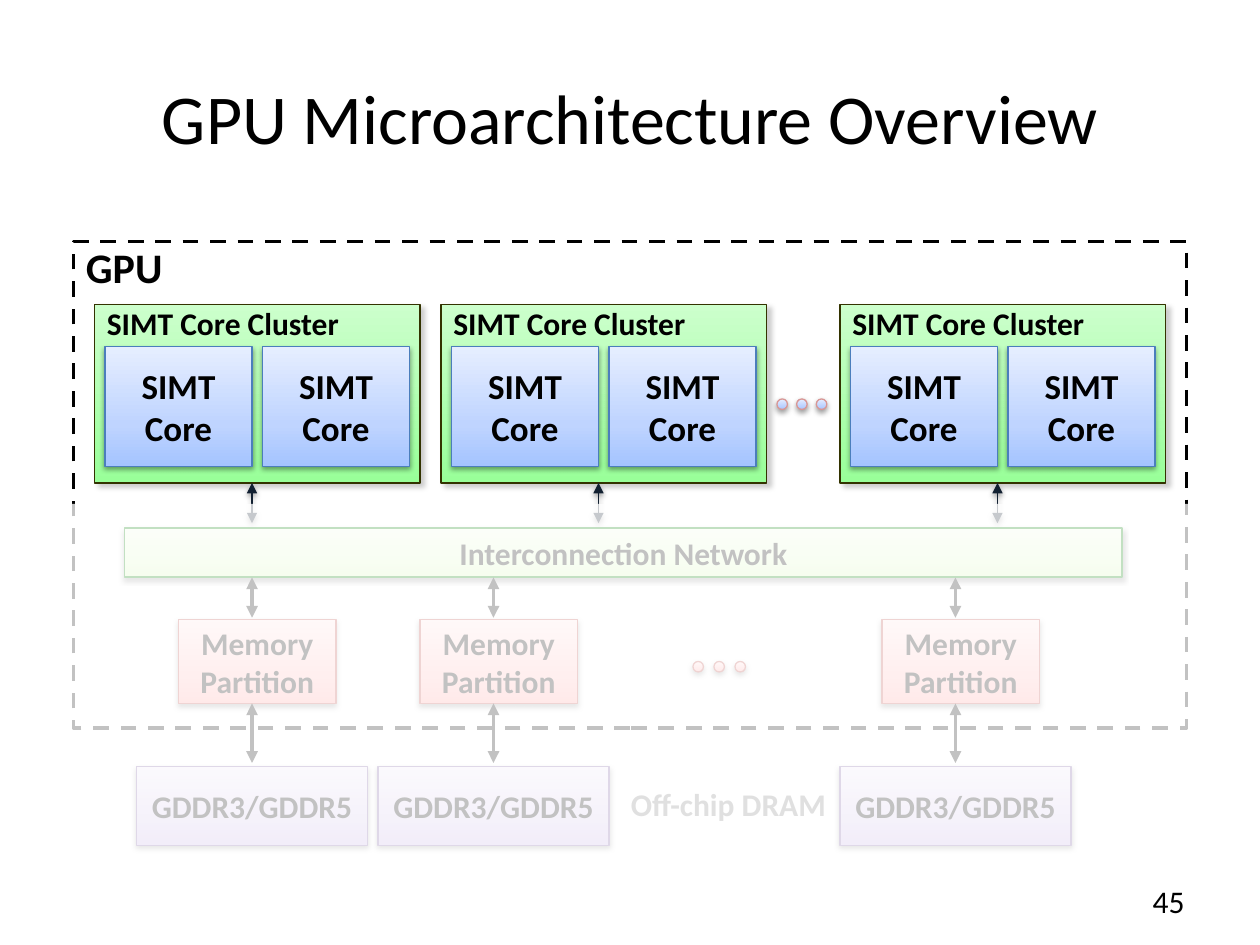
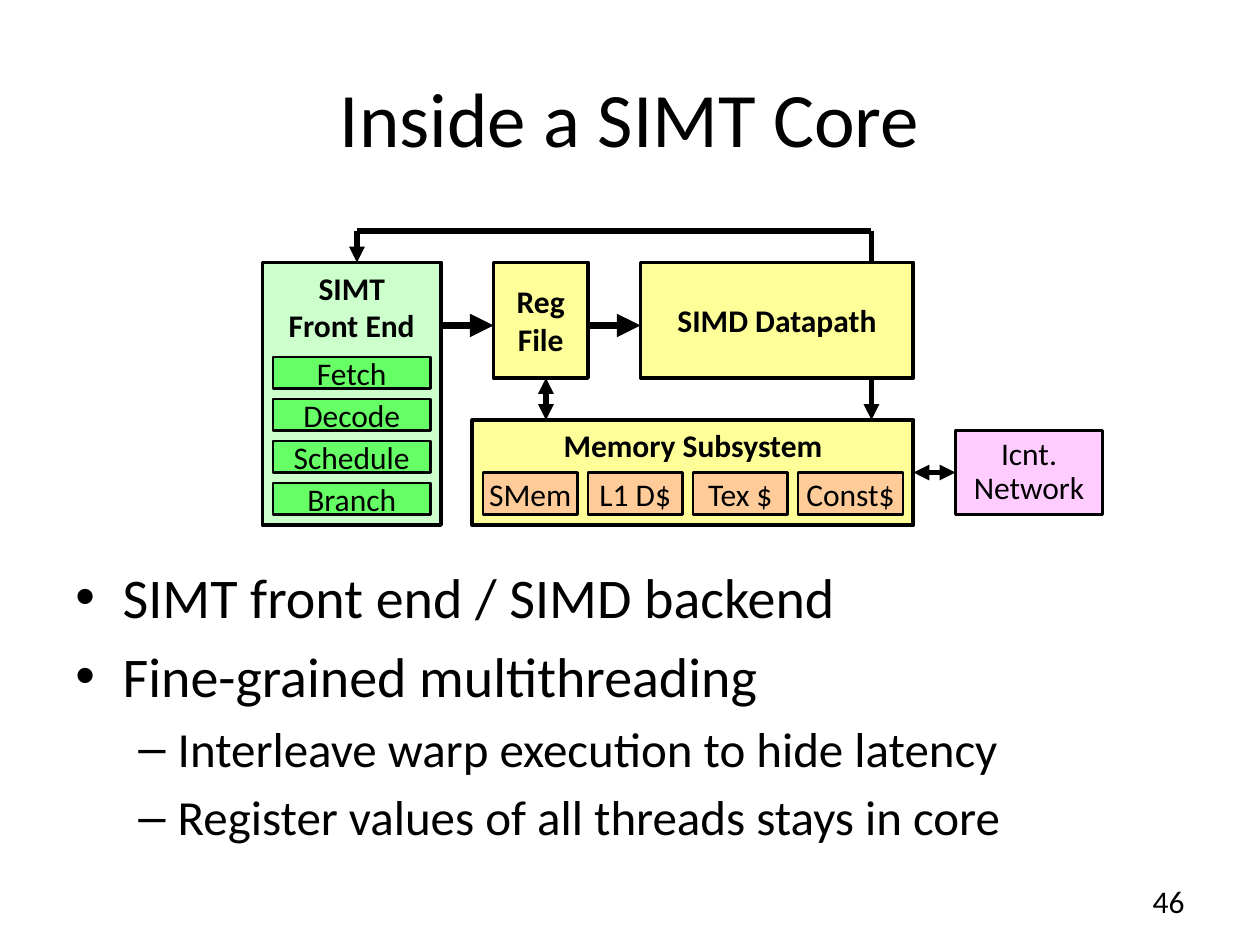
from lxml.etree import SubElement
from pptx import Presentation
from pptx.dml.color import RGBColor
from pptx.enum.dml import MSO_LINE
from pptx.enum.shapes import MSO_CONNECTOR, MSO_SHAPE
from pptx.enum.text import MSO_ANCHOR as Anchor, PP_ALIGN as Align
from pptx.oxml.ns import qn
from pptx.util import Pt

COLORS = {
    "black": "000000", "white": "FFFFFF", "gray": "7F7F7F",
    "cluster edge": "333300", "core edge": "4B7EBC", "core dot edge": "D99694",
    "core arrow": "122031", "network edge": "008000",
    "memory edge": "BF4C48", "dram edge": "7D60A0",
    "front end": "CCFFCC", "stage": "66FF66", "backend": "FFFF99",
    "cache": "FFCC99", "icnt": "FFCCFF",
}
# Gradient stops (percent, colour), from the bottom edge to the top
GRADIENTS = {
    "cluster": [(0, "99FF99"), (100, "CCFFCC")],
    "core": [(0, "A4C4FF"), (35, "BFD4FF"), (100, "E6EEFF")],
    "network": [(0, "DAFABB"), (50, "E7FBD4"), (100, "F3FDE9")],
    "memory": [(0, "FFA6A5"), (35, "FFC0BF"), (100, "FFE7E7")],
    "dram": [(0, "C9B5E8"), (35, "D8CBEE"), (100, "F0EAF9")],
}
# Shadows: opacity percent, blur, distance, direction in degrees
SOFT = (38, 3.1, 1.6, 90)
CORNER = (20, 3, 3, 45)
# Arrowheads
BOTH = ("headEnd", "tailEnd")
TO_END = ("tailEnd",)


def rgb(name):
    return RGBColor.from_string(COLORS[name])


def add_color(parent, hex_color, opacity=100):
    color = SubElement(parent, qn("a:srgbClr"), val=hex_color)
    if opacity < 100:
        SubElement(color, qn("a:alpha"), val=str(opacity * 1000))


class Deck:
    font = "Calibri"

    def __init__(self):
        self.prs = Presentation()
        self.prs.slide_width, self.prs.slide_height = Pt(720), Pt(540)
        self.slide = None

    def new_slide(self, title, title_size):
        self.slide = self.prs.slides.add_slide(self.prs.slide_layouts[6])
        self.label(36, 21.6, 648, 90, title, title_size, Align.CENTER)

    def page_number(self, number):
        self.label(516, 500.4, 168, 28.8, str(number), 18, Align.RIGHT)

    def set_text(self, frame, text, size, align, bold=False, color="black",
                 line_spacing=None):
        frame.text = text
        for paragraph in frame.paragraphs:
            paragraph.alignment = align
            if line_spacing:
                paragraph.line_spacing = line_spacing
            for run in paragraph.runs:
                run.font.name, run.font.size = self.font, Pt(size)
                run.font.bold = bold
                run.font.color.rgb = rgb(color)

    def text_area(self, x, y, w, h):
        frame = self.slide.shapes.add_textbox(Pt(x), Pt(y), Pt(w), Pt(h)).text_frame
        frame.word_wrap = True
        return frame

    def label(self, x, y, w, h, text, size, align, bold=False, color="black"):
        frame = self.text_area(x, y, w, h)
        frame.vertical_anchor = Anchor.MIDDLE
        self.set_text(frame, text, size, align, bold, color)

    def bullets(self, x, y, w, h, items):
        frame = self.text_area(x, y, w, h)
        self.set_text(frame, "\n".join(text for _, text in items), 32, Align.LEFT)
        for paragraph, (level, _) in zip(frame.paragraphs, items):
            size, margin, hang, mark = [(32, 27, 27, "•"), (28, 58.5, 22.5, "–")][level]
            paragraph.level = level
            paragraph.space_before = Pt(size * 0.2)
            paragraph.runs[0].font.size = Pt(size)
            props = paragraph._p.get_or_add_pPr()
            props.set("marL", str(Pt(margin)))
            props.set("indent", str(-Pt(hang)))
            SubElement(props, qn("a:buFont"), typeface="Arial")
            SubElement(props, qn("a:buChar"), char=mark)

    def shadow(self, effects, shadow):
        opacity, blur, distance, direction = shadow
        outer = SubElement(effects, qn("a:outerShdw"), blurRad=str(Pt(blur)),
                           dist=str(Pt(distance)), dir=str(direction * 60000),
                           rotWithShape="0")
        add_color(outer, COLORS["black"], opacity)

    def gradient(self, shape, stops):
        shape.fill.gradient()
        shape.fill.gradient_angle = 90
        stop_list = shape._element.spPr.find(".//" + qn("a:gsLst"))
        stop_list.clear()
        for position, color in stops:
            add_color(SubElement(stop_list, qn("a:gs"), pos=str(position * 1000)), color)

    def box(self, x, y, w, h, text="", fill=None, edge="black", edge_width=0.75,
            size=18, bold=True, align=Align.CENTER, anchor=Anchor.MIDDLE,
            top_inset=3.6, shadow=None, line_spacing=None, kind=MSO_SHAPE.RECTANGLE):
        shape = self.slide.shapes.add_shape(kind, Pt(x), Pt(y), Pt(w), Pt(h))
        if fill in GRADIENTS:
            self.gradient(shape, GRADIENTS[fill])
        elif fill:
            shape.fill.solid()
            shape.fill.fore_color.rgb = rgb(fill)
        else:
            shape.fill.background()
        if edge:
            shape.line.color.rgb = rgb(edge)
            shape.line.width = Pt(edge_width)
        else:
            shape.line.fill.background()
        shape.shadow.inherit = False
        if shadow:
            self.shadow(shape._element.spPr.find(qn("a:effectLst")), shadow)
        if text:
            frame = shape.text_frame
            frame.word_wrap = False
            frame.vertical_anchor = anchor
            frame.margin_top = Pt(top_inset)
            self.set_text(frame, text, size, align, bold, line_spacing=line_spacing)
        return shape

    def dots(self, xs, y, fill, edge):
        for x in xs:
            self.box(x, y, 6, 6, fill=fill, edge=edge, shadow=SOFT, kind=MSO_SHAPE.OVAL)

    def line(self, x1, y1, x2, y2, width, ends=(), color="black", shadow=None):
        link = self.slide.shapes.add_connector(
            MSO_CONNECTOR.STRAIGHT, Pt(x1), Pt(y1), Pt(x2), Pt(y2))
        link.line.color.rgb = rgb(color)
        link.line.width = Pt(width)
        for end in ends:
            SubElement(link._element.spPr.find(qn("a:ln")), qn("a:" + end),
                       type="triangle")
        effects = SubElement(link._element.spPr, qn("a:effectLst"))
        if shadow:
            self.shadow(effects, shadow)

    def veil(self, x, y, w, h, opacity):
        cover = self.box(x, y, w, h, fill="white", edge=None)
        color = cover._element.spPr.find(qn("a:solidFill"))[0]
        SubElement(color, qn("a:alpha"), val=str(opacity * 1000))


def core_cluster(deck, x):
    deck.box(x, 174, 186, 102, "SIMT Core Cluster", "cluster", "cluster edge", 1,
             align=Align.LEFT, anchor=Anchor.TOP, top_inset=0, shadow=CORNER)
    for core_x in (x + 6, x + 96):
        deck.box(core_x, 198, 84, 68.4, "SIMT\nCore", "core", "core edge",
                 size=20, shadow=SOFT)
    deck.line(x + 90, 276, x + 90, 299, 0.75, BOTH, "core arrow", SOFT)


def memory_channel(deck, center):
    deck.box(center - 42, 354, 90, 48, "Memory\nPartition", "memory", "memory edge",
             shadow=SOFT)
    deck.box(center - 66, 438, 132, 45, "GDDR3/GDDR5", "dram", "dram edge", shadow=SOFT)
    for top, bottom in ((402, 436), (330, 353)):
        deck.line(center, top, center, bottom, 2.25, BOTH)


def overview_slide(deck):
    deck.new_slide("GPU Microarchitecture Overview", 40)
    gpu = deck.box(42, 138, 636, 278, "GPU", edge_width=2.25, size=24,
                   align=Align.LEFT, anchor=Anchor.TOP, top_inset=0)
    gpu.line.dash_style = MSO_LINE.DASH

    # Ellipses between the repeated units
    deck.dots((444, 455.25, 466.5), 228, "core", "core dot edge")
    deck.dots((396, 408, 420), 378, "memory", "memory edge")

    # Network, memory channels and core clusters
    deck.box(71.3, 301.7, 570, 28, "Interconnection Network", "network",
             "network edge", shadow=SOFT)
    for center in (144, 282, 546):
        memory_channel(deck, center)
    for x in (54, 252, 480):
        core_cluster(deck, x)
    deck.label(353.4, 445, 128, 29, "Off-chip DRAM", 18, Align.LEFT, True, "gray")

    # Fade everything below the clusters
    deck.veil(36, 288, 648, 210, 76)
    deck.page_number(45)


def core_slide(deck):
    deck.new_slide("Inside a SIMT Core", 44)
    deck.bullets(36, 318, 648, 164, [
        (0, "SIMT front end / SIMD backend"),
        (0, "Fine-grained multithreading"),
        (1, "Interleave warp execution to hide latency"),
        (1, "Register values of all threads stays in core"),
    ])

    # Front end and its stages
    deck.box(150, 150, 102, 150, "SIMT\nFront End", "front end", edge_width=2.25,
             anchor=Anchor.TOP)
    for i, stage in enumerate(("Fetch", "Decode", "Schedule", "Branch")):
        deck.box(156, 204 + 24 * i, 90, 18, stage, "stage", edge_width=1.5, bold=False)

    # Backend
    deck.box(366, 150, 156, 66, "SIMD Datapath", "backend", edge_width=2.25)
    deck.box(282, 150, 54, 66, "Reg\nFile", "backend", edge_width=2.25)

    # Memory subsystem and its caches
    deck.box(270, 240, 252, 60, "Memory Subsystem", "backend", edge_width=2.25,
             anchor=Anchor.TOP)
    caches = (("SMem", 54), ("L1 D$", 54), ("Tex $", 54), ("Const$", 60))
    for i, (cache, width) in enumerate(caches):
        deck.box(276 + 60 * i, 270, width, 24, cache, "cache", edge_width=1.5, bold=False)
    deck.box(546, 246, 84, 48, "Icnt.\nNetwork", "icnt", edge_width=1.5, bold=False,
             line_spacing=0.9)

    # Data flow
    for start, end in ((252, 282), (336, 366)):
        deck.line(start, 186, end, 186, 4.5, TO_END)
    deck.line(312, 216, 312, 240, 3, BOTH)
    deck.line(498, 216, 498, 240, 3, TO_END)
    deck.line(522, 270, 546, 270, 3, BOTH)

    # Feedback from the datapath to the front end
    deck.line(498, 132, 498, 150, 3)
    deck.line(204, 132, 498, 132, 3)
    deck.line(204, 132, 204, 150, 3, TO_END)
    deck.page_number(46)


def main():
    deck = Deck()
    overview_slide(deck)
    core_slide(deck)
    deck.prs.save("out.pptx")


if __name__ == "__main__":
    main()
